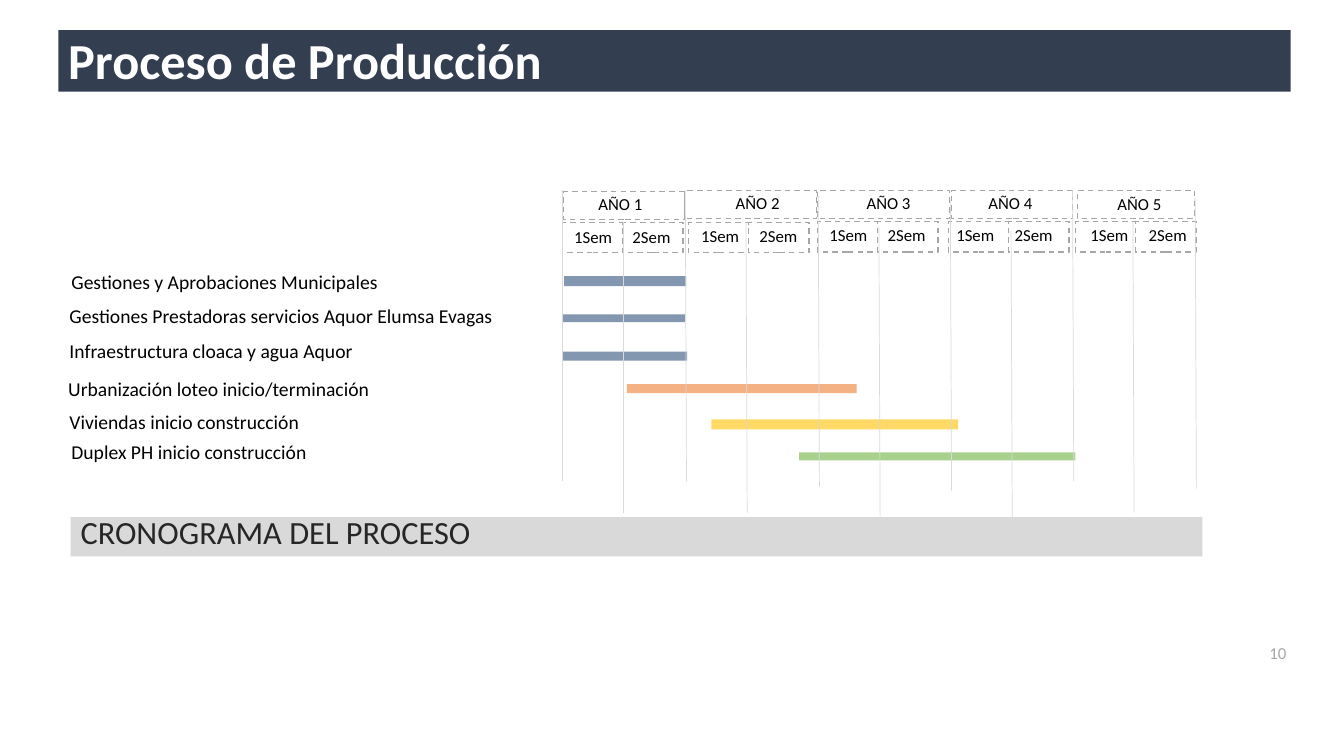
"""Build the production schedule slide with its five-year Gantt chart."""
from dataclasses import dataclass

from lxml import etree
from pptx import Presentation
from pptx.dml.color import RGBColor
from pptx.enum import dml, shapes, text
from pptx.oxml import ns
from pptx.util import Cm, Pt

HUES = {
    "navy": "333F50", "band": "D9D9D9", "grey": "A6A6A6", "ink": "262626",
    "black": "000000", "white": "FFFFFF", "blue": "8497B0",
    "orange": "F4B183", "yellow": "FFD966", "green": "A9D18E",
}


@dataclass
class Box:
    left: float
    top: float
    width: float
    height: float


@dataclass
class Style:
    size: float
    hue: str = "black"
    bold: bool = False
    space: float = 1.0
    align: text.PP_ALIGN = text.PP_ALIGN.LEFT
    anchor: text.MSO_ANCHOR = text.MSO_ANCHOR.TOP


@dataclass
class Task:
    name: str
    left: float
    top: float
    bar: Box
    hue: str


@dataclass
class Year:
    box: Box
    label: tuple[float, float]
    half: tuple[float, float]
    term: tuple[float, float]


@dataclass
class Rule:
    left: float
    top: float
    slant: float = 0.03


TASKS = [
    Task("Gestiones y Aprobaciones Municipales", 1.55, 6.68,
         Box(14.22, 6.96, 3.07, 0.25), "blue"),
    Task("Gestiones Prestadoras servicios Aquor Elumsa Evagas", 1.5, 7.54,
         Box(14.17, 7.92, 3.1, 0.2), "blue"),
    Task("Infraestructura cloaca y agua Aquor", 1.5, 8.41,
         Box(14.17, 8.86, 3.15, 0.23), "blue"),
    Task("Urbanización loteo inicio/terminación", 1.47, 9.37,
         Box(15.8, 9.68, 5.79, 0.23), "orange"),
    Task("Viviendas inicio construcción", 1.5, 10.21,
         Box(17.93, 10.57, 6.22, 0.25), "yellow"),
    Task("Duplex PH inicio construcción", 1.55, 10.97,
         Box(20.14, 11.4, 6.96, 0.2), "green"),
]
YEARS = [
    Year(Box(14.2, 4.83, 3.05, 0.71), (14.83, 4.75), (14.17, 5.61), (14.22, 5.59)),
    Year(Box(17.25, 4.8, 3.33, 0.71), (18.29, 4.72), (17.35, 5.61), (17.42, 5.56)),
    Year(Box(20.6, 4.8, 3.33, 0.71), (21.59, 4.72), (20.6, 5.59), (20.65, 5.54)),
    Year(Box(23.98, 4.8, 3.05, 0.71), (24.66, 4.72), (23.9, 5.59), (23.85, 5.54)),
    Year(Box(27.15, 4.8, 2.95, 0.71), (27.91, 4.75), (27.1, 5.59), (27.23, 5.54)),
]
RULES = [
    Rule(14.17, 4.8, 0), Rule(17.27, 4.8), Rule(20.62, 4.93),
    Rule(23.95, 5.03), Rule(30.12, 4.98), Rule(27.03, 4.8),
    Rule(15.7, 5.59, 0), Rule(18.8, 5.59), Rule(22.15, 5.72),
    Rule(25.48, 5.82), Rule(28.55, 5.59),
]


def tint(name: str) -> RGBColor:
    return RGBColor.from_string(HUES[name])


def write(shape, words: str, style: Style) -> None:
    frame = shape.text_frame
    frame.word_wrap = True
    frame.vertical_anchor = style.anchor
    para = frame.paragraphs[0]
    para.text = words
    para.alignment = style.align
    para.line_spacing = style.space
    font = para.font
    font.name, font.size, font.bold = "Calibri", Pt(style.size), style.bold
    font.color.rgb = tint(style.hue)


def label(slide, box: Box, words: str, style: Style) -> None:
    area = slide.shapes.add_textbox(
        Cm(box.left), Cm(box.top), Cm(box.width), Cm(box.height))
    write(area, words, style)


def block(slide, box: Box, hue: str | None = None):
    rect = slide.shapes.add_shape(
        shapes.MSO_SHAPE.RECTANGLE,
        Cm(box.left), Cm(box.top), Cm(box.width), Cm(box.height))
    rect.shadow.inherit = False
    if hue:
        rect.fill.solid()
        rect.fill.fore_color.rgb = tint(hue)
        rect.line.fill.background()
    else:
        rect.fill.background()
        rect.line.color.rgb = tint("grey")
        rect.line.width = Pt(1)
        rect.line.dash_style = dml.MSO_LINE.DASH
    return rect


def draw_rule(slide, rule: Rule) -> None:
    line = slide.shapes.add_connector(
        shapes.MSO_CONNECTOR.STRAIGHT, Cm(rule.left), Cm(rule.top),
        Cm(rule.left + rule.slant), Cm(rule.top + 7.33))
    line.line.color.rgb = tint("band")
    line.line.width = Pt(0.5)
    etree.SubElement(line._element.spPr, ns.qn("a:effectLst"))


def draw_year(slide, rank: int, year: Year) -> None:
    small = Style(12)
    block(slide, year.box)
    label(slide, Box(*year.label, 2, 0.76), f"AÑO {rank}", small)
    for half in range(2):
        left, top = year.half
        block(slide, Box(left + half * 1.52, top, 1.52, 0.76))
        left, top = year.term
        label(slide, Box(left + half * 1.47, top, 1.8, 0.76),
              f"{half + 1}Sem", small)


def draw_task(slide, task: Task) -> None:
    label(slide, Box(task.left, task.top, 12.73, 0.86), task.name, Style(14))
    block(slide, task.bar, task.hue)


def main() -> None:
    deck = Presentation()
    deck.slide_width, deck.slide_height = Cm(33.87), Cm(19.05)
    slide = deck.slides.add_slide(deck.slide_layouts[6])
    mid = text.MSO_ANCHOR.MIDDLE

    block(slide, Box(1.47, 0.76, 31.06, 1.55), "navy")
    label(slide, Box(1.47, 0.61, 14.35, 1.96), "Proceso de Producción",
          Style(36, "white", True, 0.9, anchor=mid))
    band = block(slide, Box(1.78, 13.03, 28.52, 0.99), "band")
    write(band, "CRONOGRAMA DEL PROCESO",
          Style(23.1, "ink", space=0.7, anchor=mid))

    for rank, year in enumerate(YEARS, 1):
        draw_year(slide, rank, year)
    for task in TASKS:
        draw_task(slide, task)
    for rule in RULES:
        draw_rule(slide, rule)

    label(slide, Box(31.17, 15.72, 1.5, 1.45), "10",
          Style(12, "grey", align=text.PP_ALIGN.RIGHT, anchor=mid))
    deck.save("out.pptx")


if __name__ == "__main__":
    main()
